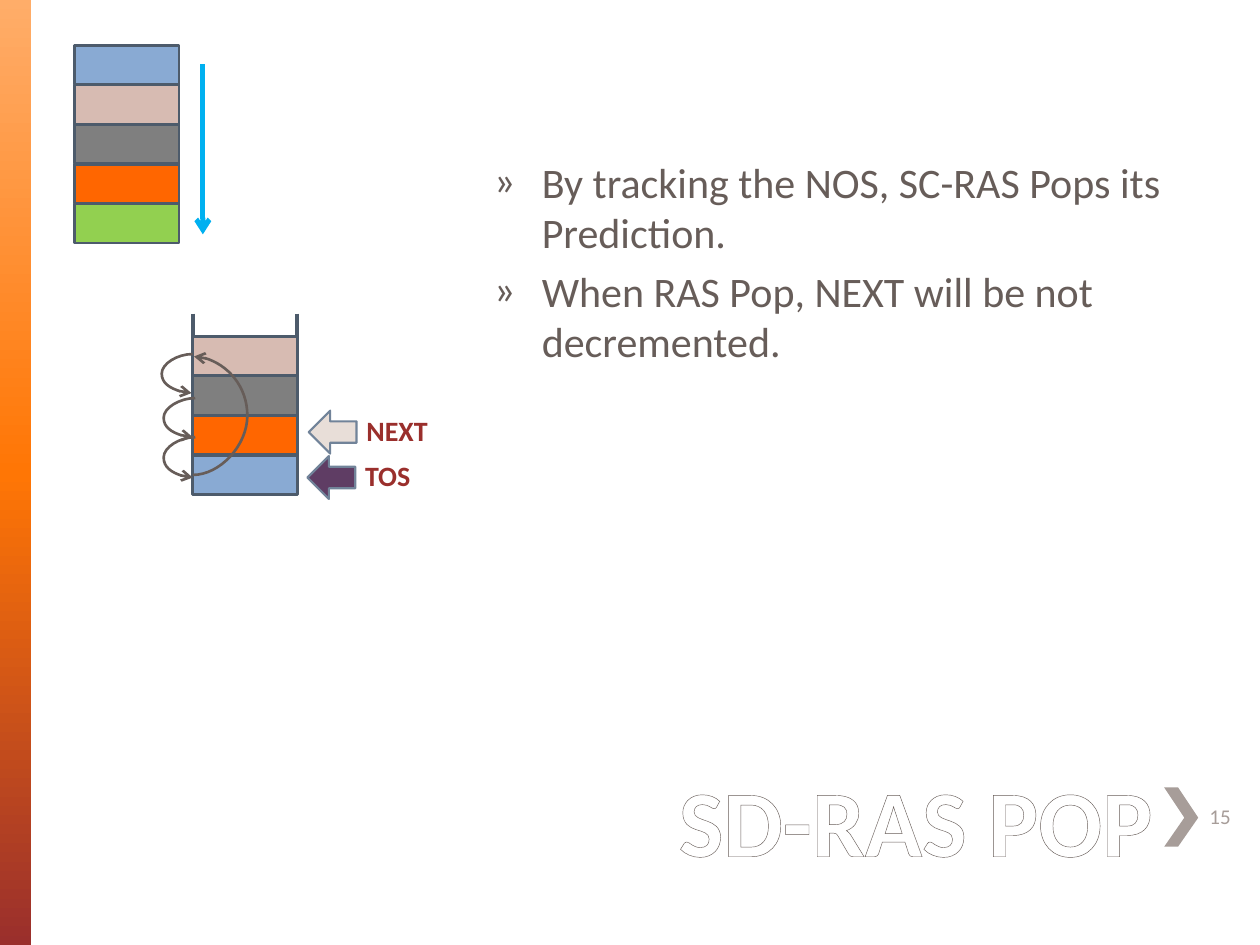
"""Builds the SD-RAS POP slide with its two stacks, pointers and links."""
import pptx
import pptx.util
import pptx.dml.color
import pptx.enum.shapes
import pptx.enum.text
import pptx.oxml
import pptx.oxml.ns

Inches = pptx.util.Inches
Pt = pptx.util.Pt
KIND = pptx.enum.shapes.MSO_SHAPE
LINK = pptx.enum.shapes.MSO_CONNECTOR
ALIGN = pptx.enum.text.PP_ALIGN
ANCHOR = pptx.enum.text.MSO_ANCHOR
NS = pptx.oxml.ns.nsdecls("a")

TITLE = "SD-RAS POP"
POINTS = [
    "By tracking the NOS, SC-RAS Pops its Prediction.",
    "When RAS Pop, NEXT will be not decremented.",
]
BAND = [(0, "FFAD69"), (50, "FF7605"), (100, "9A2F2C")]
BLUE, PINK, GRAY, ORANGE, GREEN = "89AAD3", "D7BBB2", "7F7F7F", "FF6600", "92D050"
INK, EDGE, RED, PALE = "675D59", "4D5B6B", "9A2F2C", "A79D99"
STACKS = [
    (0.59, 0.36, [BLUE, PINK, GRAY, ORANGE, GREEN]),
    (1.53, 2.67, [PINK, GRAY, ORANGE, BLUE]),
]
CELL_W, CELL_H, STEP = 0.83, 0.31, 0.315
WALLS = [1.53, 2.36]
MARKS = [("NEXT", 2.45, 3.26, "E8DED8", 0.69), ("TOS", 2.44, 3.62, "5F3D64", 0.62)]
LOOPS = [
    (1.55, 3.16, 1.53, 3.47, 1.3),
    (1.55, 3.47, 1.53, 3.79, 1.3),
    (1.53, 2.81, 1.52, 3.12, 1.28),
    (1.53, 3.77, 1.54, 2.83, 1.97),
]
CHEVRON = [(9.35, 6.25), (9.24, 6.25), (9.4, 6.49), (9.24, 6.72), (9.35, 6.72), (9.51, 6.49)]


def rgb(code):
    return pptx.dml.color.RGBColor.from_string(code)


def xml(text):
    return pptx.oxml.parse_xml(text)


def place(shape, *box):
    shape.left, shape.top, shape.width, shape.height = map(Inches, box)


def paint(shape, fill, line=None, width=1.5):
    shape.shadow.inherit = False
    shape.fill.solid()
    shape.fill.fore_color.rgb = rgb(fill)
    if line:
        shape.line.color.rgb = rgb(line)
        shape.line.width = Pt(width)
    else:
        shape.line.fill.background()


def style(para, size, color, bold=False):
    for run in para.runs:
        run.font.name = "Calibri"
        run.font.size = Pt(size)
        run.font.bold = bold
        run.font.color.rgb = rgb(color)


def label(shapes, text, box, size, color, bold=False):
    item = shapes.add_textbox(*map(Inches, box))
    item.text_frame.text = text
    style(item.text_frame.paragraphs[0], size, color, bold)
    return item.text_frame


def link(shapes, kind, ends, color, width, arrow=False):
    item = shapes.add_connector(kind, *map(Inches, ends))
    item.line.color.rgb = rgb(color)
    item.line.width = Pt(width)
    if arrow:
        item.line._get_or_add_ln().append(xml(f'<a:tailEnd {NS} type="arrow"/>'))
    item._element.spPr.append(xml(f"<a:effectLst {NS}/>"))
    return item


def band(shapes):
    bar = shapes.add_shape(KIND.RECTANGLE, 0, 0, Inches(0.25), Inches(7.5))
    bar.shadow.inherit = False
    bar.line.fill.background()
    stops = "".join(
        f'<a:gs pos="{at * 1000}"><a:srgbClr val="{code}"/></a:gs>' for at, code in BAND
    )
    props = bar._element.spPr
    props.insert(2, xml(
        f'<a:gradFill {NS}><a:gsLst>{stops}</a:gsLst><a:lin ang="5400000"/></a:gradFill>'
    ))


def heading(slide):
    title = slide.shapes.title
    place(title, 1.33, 5.75, 7.92, 1.25)
    frame = title.text_frame
    frame.text = TITLE
    frame.vertical_anchor = ANCHOR.BOTTOM
    frame.auto_size = pptx.enum.text.MSO_AUTO_SIZE.NONE
    para = frame.paragraphs[0]
    para.alignment = ALIGN.RIGHT
    style(para, 54, "FFFFFF", True)
    para.runs[0].font._element.insert(0, xml(
        f'<a:ln {NS} w="12700"><a:solidFill><a:srgbClr val="{INK}"/></a:solidFill></a:ln>'
    ))


def body(slide):
    item = slide.placeholders[1]
    place(item, 3.82, 1.19, 5.68, 4.61)
    frame = item.text_frame
    frame.text = "\n".join(POINTS)
    frame.auto_size = pptx.enum.text.MSO_AUTO_SIZE.NONE
    for para in frame.paragraphs:
        style(para, 24, INK)
        props = para._p.get_or_add_pPr()
        props.set("marL", str(Inches(0.38)))
        props.set("indent", str(Inches(-0.38)))
        props.append(xml(f'<a:buClr {NS}><a:srgbClr val="{INK}"/></a:buClr>'))
        props.append(xml(f'<a:buFont {NS} typeface="Calibri"/>'))
        props.append(xml(f'<a:buChar {NS} char="»"/>'))


def stack(shapes, left, top, fills):
    for row, fill in enumerate(fills):
        box = (left, top + row * STEP, CELL_W, CELL_H)
        paint(shapes.add_shape(KIND.RECTANGLE, *map(Inches, box)), fill, EDGE)


def loop(shapes, x1, y1, x2, y2, mid):
    item = link(shapes, LINK.CURVE, (x1, y1, x2, y2), INK, 1.5, True)
    bend = round((mid - x1) / (x2 - x1) * 100000)
    guides = item._element.spPr.prstGeom.get_or_add_avLst()
    guides.append(xml(f'<a:gd {NS} name="adj1" fmla="val {bend}"/>'))


def main():
    deck = pptx.Presentation()
    deck.slide_width, deck.slide_height = Inches(10), Inches(7.5)
    slide = deck.slides.add_slide(deck.slide_layouts[1])
    shapes = slide.shapes
    band(shapes)
    pen = shapes.build_freeform(*map(Inches, CHEVRON[0]))
    pen.add_line_segments([tuple(map(Inches, spot)) for spot in CHEVRON[1:]])
    paint(pen.convert_to_shape(), PALE)
    heading(slide)
    body(slide)
    for x in WALLS:
        link(shapes, LINK.STRAIGHT, (x, 2.49, x, 3.91), EDGE, 2.25)
    for left, top, fills in STACKS:
        stack(shapes, left, top, fills)
    for text, left, top, fill, width in MARKS:
        arrow = shapes.add_shape(KIND.LEFT_ARROW, *map(Inches, (left, top, 0.38, 0.34)))
        paint(arrow, fill, "718399", 1.25)
        label(shapes, text, (left + 0.36, top - 0.03, width, 0.37), 16, RED, True)
    link(shapes, LINK.STRAIGHT, (1.61, 0.51, 1.61, 1.86), "00B0F0", 2.75, True)
    for ends in LOOPS:
        loop(shapes, *ends)
    page = label(shapes, "15", (9.5, 6.28, 0.42, 0.4), 12, PALE)
    page.vertical_anchor = ANCHOR.MIDDLE
    page.word_wrap = True
    deck.save("out.pptx")


if __name__ == "__main__":
    main()
